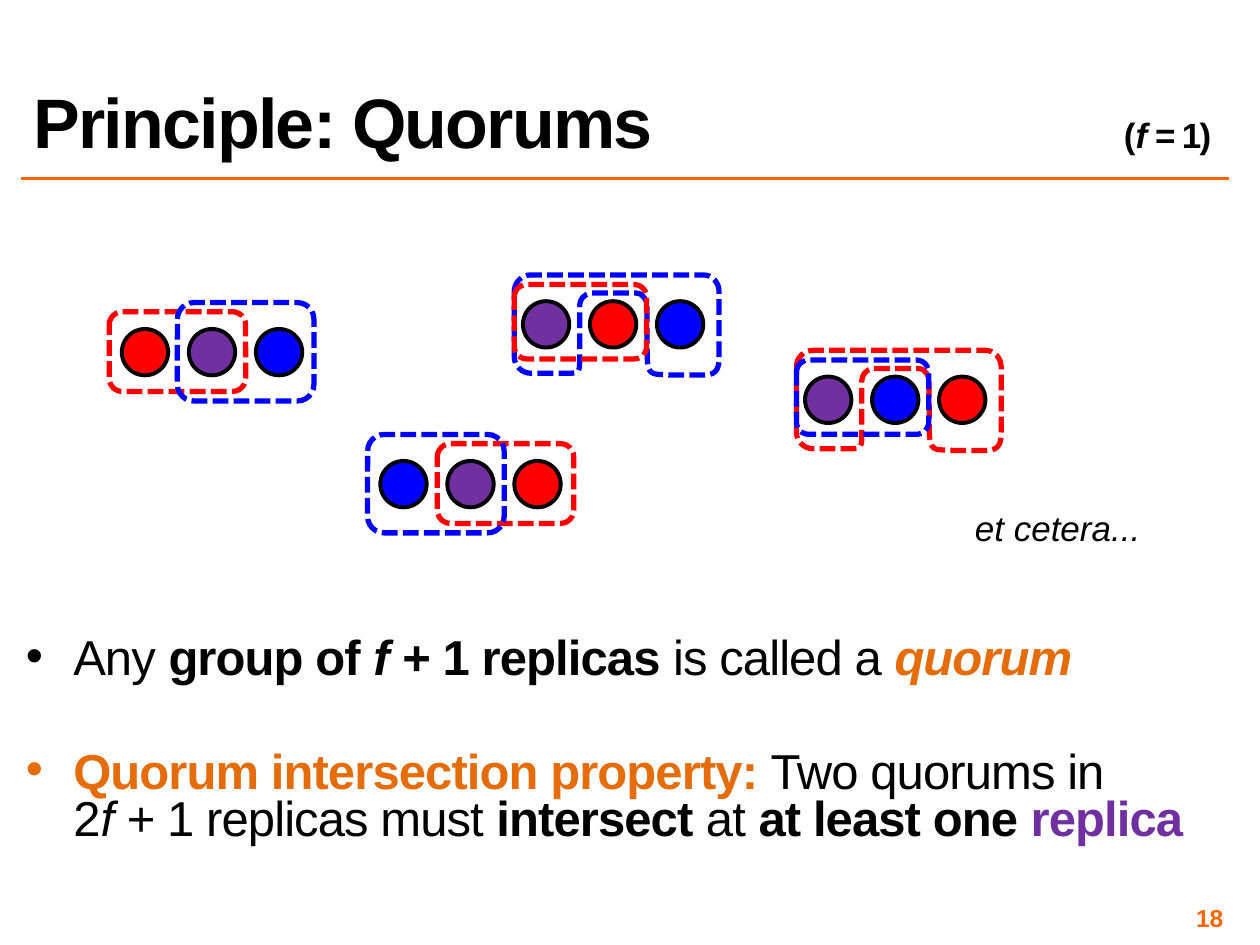
from lxml import etree
from pptx import Presentation
from pptx.dml.color import RGBColor
from pptx.enum import dml, shapes, text
from pptx.oxml.ns import qn
from pptx.util import Pt

COLORS = {"black": "000000", "red": "FF0000", "blue": "0000FF", "purple": "7030A0",
          "orange": "FF6600", "accent": "E46C0A"}
NBSP = chr(160)
PITCH, DIAMETER = 38.3, 26.5
NOTCH_START = (0, 9.4)
NOTCH = [
    [(0, 4.3), (4.3, 0), (9.4, 0)], [(108, 0)],
    [(113, 0), (117, 4.3), (117, 9.4)], [(117, 46.8)],
    [(117, 51.8), (116.6, 57.4), (108.4, 57.2)],
    [(95, 57.2), (91.4, 57.4), (83.5, 56.9)],
    [(77, 56.9), (76.3, 54), (76, 47.5)],
    [(76, 41.4), (75.8, 34.6), (75.8, 19.4)],
    [(76, 15.1), (74.2, 10.6), (69.8, 10.4)], [(44.4, 10.4)],
    [(39.6, 10.6), (37.4, 14.4), (37.4, 17.3)], [(37.4, 46.8)],
    [(37.4, 55.4), (37.4, 56.2), (31, 56.2)], [(9.4, 56.2)],
    [(4.3, 56.2), (0, 51.8), (0, 46.8)],
]


def rgb(name):
    return RGBColor.from_string(COLORS[name])


def add_runs(p, runs, size, spacing=0):
    for words, style, color in runs:
        r = p.add_run()
        r.text = words
        r.font.name = "Arial"
        r.font.size = Pt(20 if "s" in style else size)
        r.font.bold = "b" in style
        r.font.italic = "i" in style
        r.font.color.rgb = rgb(color)
        if spacing:
            r._r.get_or_add_rPr().set("spc", str(round(spacing * 100)))


def add_box(s, x, y, w, h, inset=(7.2, 3.6), anchor=text.MSO_ANCHOR.TOP, wrap=True):
    tf = s.shapes.add_textbox(Pt(x), Pt(y), Pt(w), Pt(h)).text_frame
    tf.word_wrap = wrap
    tf.vertical_anchor = anchor
    tf.margin_left = tf.margin_right = Pt(inset[0])
    tf.margin_top = tf.margin_bottom = Pt(inset[1])
    return tf


def add_title(s):
    p = add_box(s, 12, 11.7, 690, 84.24, anchor=text.MSO_ANCHOR.BOTTOM).paragraphs[0]
    p.line_spacing = 0.8
    tabs = etree.SubElement(p._p.get_or_add_pPr(), qn("a:tabLst"))
    etree.SubElement(tabs, qn("a:tab"), pos=str(Pt(673.2)), algn="r")
    add_runs(p, [("Principle: Quorums\t", "b", "black"), ("(", "bs", "black"),
                 ("f", "bis", "black"), (" = 1)", "bs", "black")], 40, -1)


def add_bullet(p, runs, before):
    p.line_spacing = 0.8
    p.space_before = Pt(before)
    pPr = p._p.get_or_add_pPr()
    pPr.set("marL", str(Pt(27)))
    pPr.set("indent", str(Pt(-27)))
    etree.SubElement(pPr, qn("a:buFont"), typeface="Arial")
    etree.SubElement(pPr, qn("a:buChar"), char="•")
    add_runs(p, runs, 28, -0.5)


def add_rule(s):
    sp = s.shapes.add_connector(shapes.MSO_CONNECTOR.STRAIGHT,
                                Pt(12), Pt(102), Pt(702), Pt(102))
    sp.line.color.rgb = rgb("orange")
    sp.line.width = Pt(2)
    etree.SubElement(sp._element.spPr, qn("a:effectLst"))


def add_replicas(s, x, y, colors):
    for i, color in enumerate(colors):
        sp = s.shapes.add_shape(shapes.MSO_SHAPE.OVAL, Pt(x + i * PITCH), Pt(y),
                                Pt(DIAMETER), Pt(DIAMETER))
        sp.shadow.inherit = False
        sp.fill.solid()
        sp.fill.fore_color.rgb = rgb(color)
        sp.line.color.rgb = rgb("black")
        sp.line.width = Pt(2.25)


def style_quorum(sp, color):
    sp.shadow.inherit = False
    sp.fill.background()
    sp.line.color.rgb = rgb(color)
    sp.line.width = Pt(3)
    sp.line.dash_style = dml.MSO_LINE.SQUARE_DOT


def add_quorum(s, x, y, w, h, color):
    sp = s.shapes.add_shape(shapes.MSO_SHAPE.ROUNDED_RECTANGLE, Pt(x), Pt(y), Pt(w), Pt(h))
    style_quorum(sp, color)


def add_notched_quorum(s, x, y, color):
    start, *rest = [(Pt(x + px), Pt(y + py))
                    for px, py in [NOTCH_START] + [q for part in NOTCH for q in part]]
    fb = s.shapes.build_freeform(*start)
    fb.add_line_segments(rest, close=True)
    sp = fb.convert_to_shape()
    segments = iter(list(sp._element.iter(qn("a:lnTo"))))
    for part in NOTCH:
        first, *others = [next(segments) for _ in part]
        if others:
            first.tag = qn("a:cubicBezTo")
        for segment in others:
            first.append(segment[0])
            segment.getparent().remove(segment)
    style_quorum(sp, color)


def add_neighbours(s, x, y, colors):
    add_replicas(s, x, y, colors)
    for color, dx, dy, h in (("red", 32.6, -9.9, 45.6), ("blue", 31.8, -15.1, 56.2)):
        add_quorum(s, x + (-7.2 if colors[0] == color else dx), y + dy, 78, h, color)


def add_skipping(s, x, y, colors):
    add_replicas(s, x, y, colors)
    add_notched_quorum(s, x - 4.9, y - 15, colors[2])
    add_quorum(s, x - 4.9, y - 9.5, 75.6, 42.5, colors[1])


def main():
    prs = Presentation()
    prs.slide_width, prs.slide_height = Pt(720), Pt(540)
    s = prs.slides.add_slide(prs.slide_layouts[6])
    add_rule(s)
    add_title(s)

    add_neighbours(s, 69.6, 188, ("red", "purple", "blue"))
    add_skipping(s, 298.8, 172.1, ("purple", "red", "blue"))
    add_neighbours(s, 217.3, 263.4, ("blue", "purple", "red"))
    add_skipping(s, 460, 215.2, ("purple", "blue", "red"))

    p = add_box(s, 549.7, 285.8, 109.4, 31.7, wrap=False).paragraphs[0]
    p.alignment = text.PP_ALIGN.CENTER
    add_runs(p, [("et cetera...", "i", "black")], 20)

    tf = add_box(s, 12, 361.6, 690, 136, inset=(2.9, 2.9))
    add_bullet(tf.paragraphs[0], [
        ("Any ", "", "black"), ("group of ", "b", "black"), ("f", "bi", "black"),
        (" + 1 replicas ", "b", "black"), ("is called a ", "", "black"),
        ("quorum", "bi", "accent")], 6.4)
    add_bullet(tf.add_paragraph(), [
        ("Quorum intersection property: ", "b", "accent"), ("Two quorums in 2", "", "black"),
        ("f", "i", "black"), (f"{NBSP}+{NBSP}1 replicas must ", "", "black"),
        ("intersect", "b", "black"), (" at ", "", "black"),
        ("at least one", "b", "black"), (" replica", "b", "purple")], 38)

    p = add_box(s, 534.2, 516.2, 167.8, 16.6, (2.9, 2.9), text.MSO_ANCHOR.MIDDLE).paragraphs[0]
    p.alignment = text.PP_ALIGN.RIGHT
    add_runs(p, [("18", "b", "orange")], 14)
    prs.save("out.pptx")


if __name__ == "__main__":
    main()
